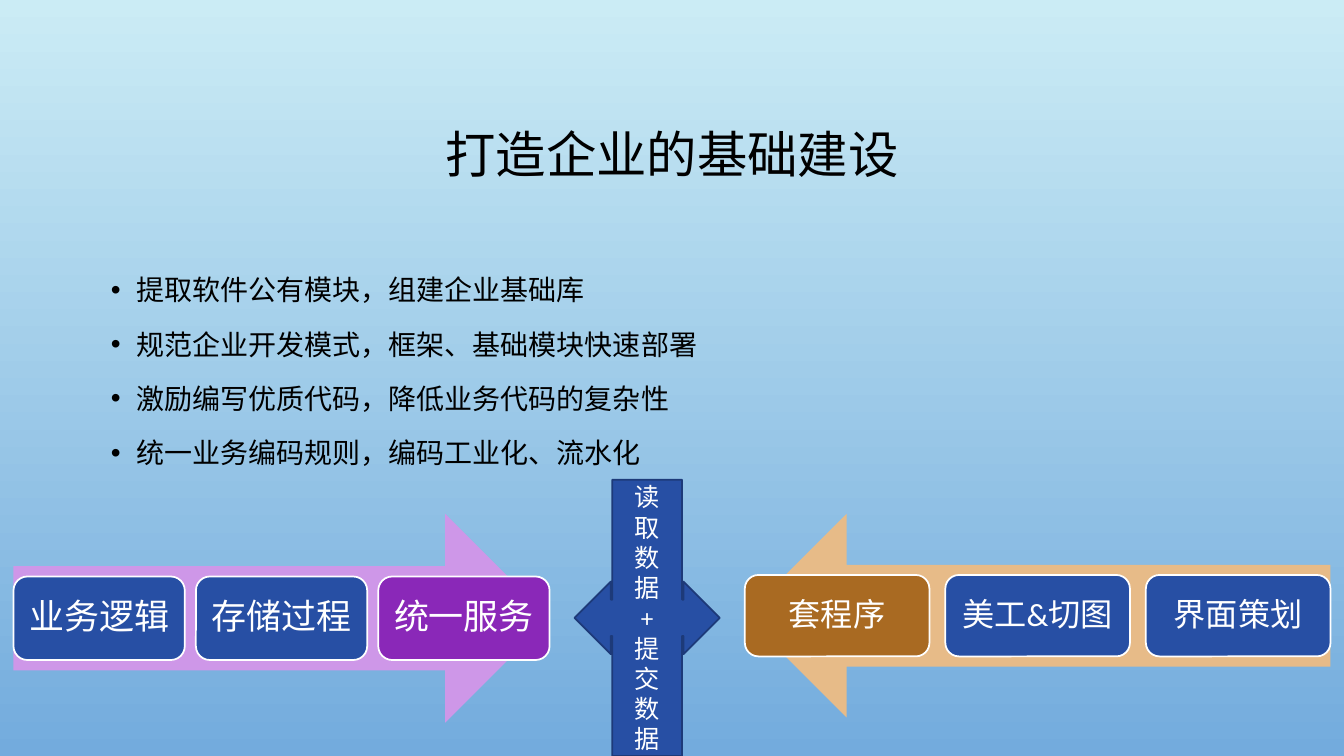
from pptx import Presentation, util as u
from pptx.dml.color import RGBColor
from pptx.enum import shapes, text
from pptx.oxml import parse_xml
from pptx.oxml.ns import nsdecls

FONT = "Calibri"
COLORS = {
    "sky": "CBECF5", "deep_sky": "73ABDD", "black": "000000", "white": "FFFFFF",
    "blue": "274FA4", "navy": "1D3A79", "purple": "8A28B8", "lilac": "CE97E8",
    "brown": "A96A22", "sand": "E7BB88",
}


def color(name):
    return RGBColor.from_string(COLORS[name])


def format_runs(paragraph, size, color_name):
    for run in paragraph.runs:
        run.font.name = FONT
        run.font.size = u.Pt(size)
        run.font.color.rgb = color(color_name)


def place(shape, box):
    shape.left, shape.top, shape.width, shape.height = [u.Cm(value) for value in box]


def add_filled_shape(slide, kind, box, fill, line=None):
    shape = slide.shapes.add_shape(kind, *[u.Cm(value) for value in box])
    shape.shadow.inherit = False
    shape.fill.solid()
    shape.fill.fore_color.rgb = color(fill)
    if line:
        shape.line.color.rgb = color(line)
        shape.line.width = u.Pt(1.25)
    else:
        shape.line.fill.background()
    return shape


def fill_shape_text(shape, wording, size, line_spacing):
    frame = shape.text_frame
    frame.word_wrap = True
    frame.vertical_anchor = text.MSO_ANCHOR.MIDDLE
    frame.text = wording
    for paragraph in frame.paragraphs:
        paragraph.alignment = text.PP_ALIGN.CENTER
        paragraph.line_spacing = line_spacing
        format_runs(paragraph, size, "white")
    return frame


def paint_background(slide):
    fill = slide.background.fill
    fill.gradient()
    fill.gradient_angle = 270
    for stop, name, position in zip(fill.gradient_stops, ("sky", "deep_sky"), (0, 1)):
        stop.color.rgb = color(name)
        stop.position = position


def add_title(slide, box, wording):
    title = slide.shapes.title
    place(title, box)
    frame = title.text_frame
    frame.text = wording
    frame.auto_size = text.MSO_AUTO_SIZE.NONE
    frame.vertical_anchor = text.MSO_ANCHOR.MIDDLE
    paragraph = frame.paragraphs[0]
    paragraph.alignment = text.PP_ALIGN.CENTER
    paragraph.line_spacing = 0.9
    format_runs(paragraph, 36, "black")


def add_bullets(slide, box, items):
    body = slide.placeholders[1]
    place(body, box)
    frame = body.text_frame
    frame.text = "\n".join(items)
    frame.auto_size = text.MSO_AUTO_SIZE.NONE
    frame.vertical_anchor = text.MSO_ANCHOR.TOP
    indent = u.Cm(0.64)
    for index, paragraph in enumerate(frame.paragraphs):
        properties = paragraph._p.get_or_add_pPr()
        properties.set("marL", str(indent))
        properties.set("indent", str(-indent))
        properties.append(parse_xml(f'<a:buFont {nsdecls("a")} typeface="Arial"/>'))
        properties.append(parse_xml(f'<a:buChar {nsdecls("a")} char="•"/>'))
        paragraph.line_spacing = 1.2
        paragraph.space_before = u.Pt(10 if index else 0)
        format_runs(paragraph, 20, "black")


def add_process(slide, box, arrow_kind, arrow_fill, cards, gap, size):
    """An arrow with a row of equal cards centred across it."""
    left, top, width, height = box
    add_filled_shape(slide, arrow_kind, box, arrow_fill)
    card_width = (width - gap * (len(cards) - 1)) / len(cards)
    card_height = height * 0.4
    card_top = top + (height - card_height) / 2
    for index, (wording, fill) in enumerate(cards):
        card_box = (left + index * (card_width + gap), card_top, card_width, card_height)
        card = add_filled_shape(slide, shapes.MSO_SHAPE.ROUNDED_RECTANGLE,
                                card_box, fill, "white")
        frame = fill_shape_text(card, wording, size, 0.9)
        frame.margin_left = frame.margin_right = u.Cm(0.25)
        frame.margin_top = frame.margin_bottom = u.Cm(0.25)


def add_exchange(slide, box, lines):
    callout = add_filled_shape(slide, shapes.MSO_SHAPE.LEFT_RIGHT_ARROW_CALLOUT,
                               box, "blue", "navy")
    fill_shape_text(callout, "\n".join(lines), 18, 1.0)


def main():
    presentation = Presentation()
    presentation.slide_width = u.Cm(33.87)
    presentation.slide_height = u.Cm(19.05)
    slide = presentation.slides.add_slide(presentation.slide_layouts[1])
    paint_background(slide)

    # Title and list
    add_title(slide, (2.54, 1.73, 28.79, 4.45), "打造企业的基础建设")
    add_bullets(slide, (2.54, 6.58, 28.79, 9.5), [
        "提取软件公有模块，组建企业基础库",
        "规范企业开发模式，框架、基础模块快速部署",
        "激励编写优质代码，降低业务代码的复杂性",
        "统一业务编码规则，编码工业化、流水化",
    ])

    # Back-end and front-end processes
    add_process(slide, (0.34, 12.95, 13.51, 5.26), shapes.MSO_SHAPE.RIGHT_ARROW, "lilac",
                [("业务逻辑", "blue"), ("存储过程", "blue"), ("统一服务", "purple")], 0.28, 25)
    add_process(slide, (18.77, 12.95, 14.76, 5.13), shapes.MSO_SHAPE.LEFT_ARROW, "sand",
                [("套程序", "brown"), ("美工&切图", "blue"), ("界面策划", "blue")], 0.4, 23)

    # Data exchange between them
    add_exchange(slide, (14.48, 12.09, 3.66, 6.96), ["读取数据", "+", "提交数据"])

    presentation.save("out.pptx")


if __name__ == "__main__":
    main()
